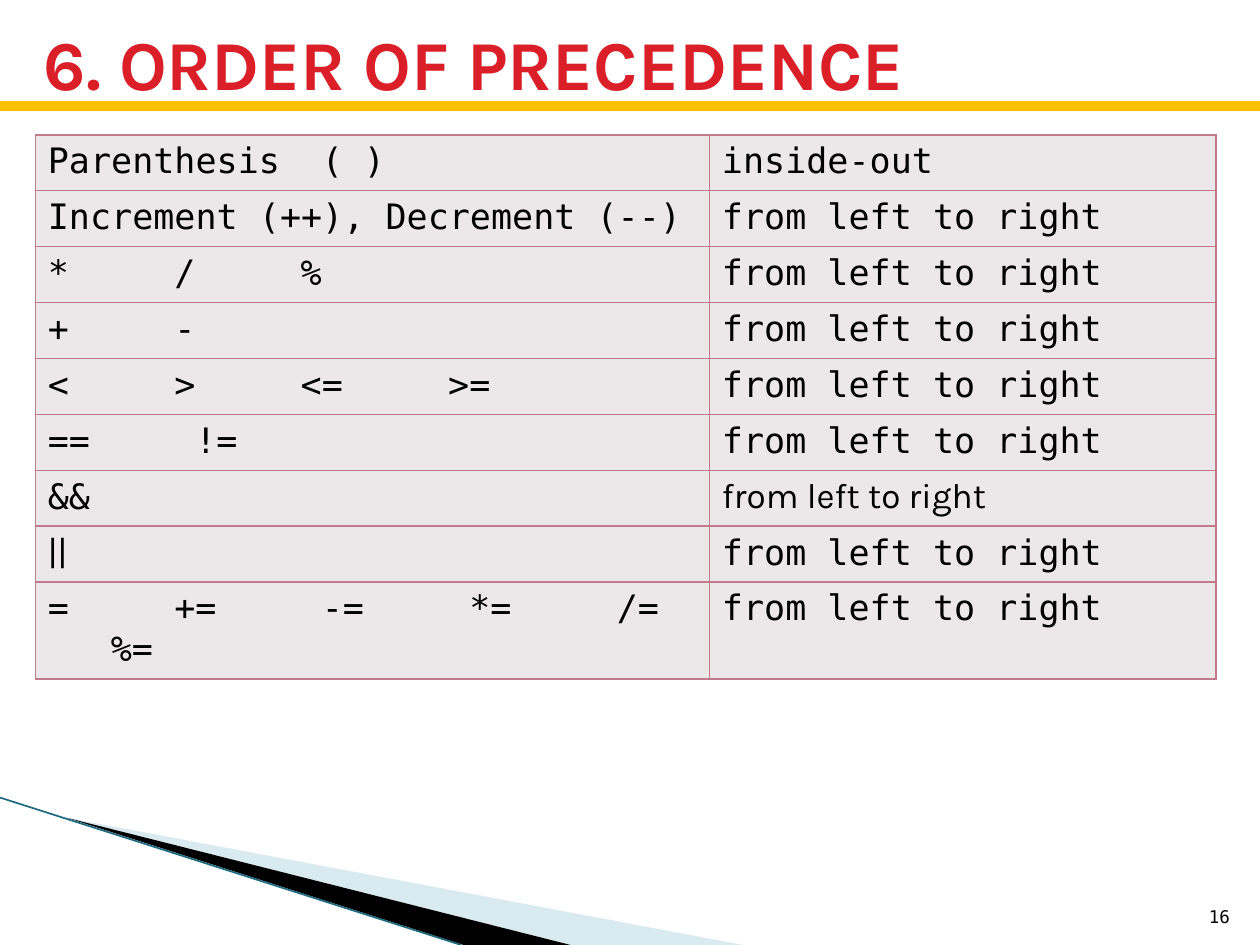
from dataclasses import dataclass

from lxml.etree import SubElement
from pptx import Presentation
from pptx.dml.color import RGBColor
from pptx.enum.shapes import MSO_CONNECTOR
from pptx.enum.text import MSO_ANCHOR, PP_ALIGN
from pptx.oxml.ns import qn
from pptx.util import Inches, Pt


@dataclass(frozen=True)
class Theme:
    heading_font: str = "Karla"
    code_font: str = "DejaVu Sans Mono"
    title_size: int = 40
    table_size: int = 20
    number_size: int = 10
    red: str = "DA1F28"
    yellow: str = "FFC000"
    black: str = "000000"
    pale_blue: str = "A0CBDC"
    teal: str = "1B6A80"
    cell_fill: str = "ECE8E9"
    border: str = "C07B8A"


THEME = Theme()
LEFT_TO_RIGHT = "from left to right"
OPERATOR_GAP = 5
CHARACTER_WIDTH = 0.602 * THEME.table_size / 72

# Operators, order of evaluation, font of each column
PRECEDENCE = [
    ("Parenthesis\t( )", "inside-out", THEME.code_font, THEME.code_font),
    ("Increment (++), Decrement (--)", LEFT_TO_RIGHT, THEME.code_font, THEME.code_font),
    ("*\t/\t%", LEFT_TO_RIGHT, THEME.code_font, THEME.code_font),
    ("+\t-", LEFT_TO_RIGHT, THEME.code_font, THEME.code_font),
    ("<\t>\t<=\t>=", LEFT_TO_RIGHT, THEME.code_font, THEME.code_font),
    ("==\t!=", LEFT_TO_RIGHT, THEME.code_font, THEME.code_font),
    ("&&", LEFT_TO_RIGHT, THEME.code_font, THEME.heading_font),
    ("||", LEFT_TO_RIGHT, THEME.heading_font, THEME.code_font),
    ("=\t+=\t-=\t*=\t/=\n%=", LEFT_TO_RIGHT, THEME.code_font, THEME.code_font),
]


def style_font(font, name, size, color, bold=False):
    font.name = name
    font.size = Pt(size)
    font.bold = bold
    font.color.rgb = RGBColor.from_string(color)


def add_line(page, start, end, color, width):
    line = page.shapes.add_connector(
        MSO_CONNECTOR.STRAIGHT, *map(Inches, start), *map(Inches, end))
    line.line.color.rgb = RGBColor.from_string(color)
    line.line.width = Pt(width)
    SubElement(line._element.spPr, qn("a:effectLst"))


def add_triangle(page, points, color, opacity=100):
    builder = page.shapes.build_freeform(
        Inches(points[0][0]), Inches(points[0][1]))
    builder.add_line_segments([(Inches(x), Inches(y)) for x, y in points[1:]])
    triangle = builder.convert_to_shape()
    triangle.shadow.inherit = False
    triangle.line.fill.background()
    triangle.fill.solid()
    triangle.fill.fore_color.rgb = RGBColor.from_string(color)
    if opacity < 100:
        color_element = triangle._element.spPr.find(
            f"{qn('a:solidFill')}/{qn('a:srgbClr')}")
        SubElement(color_element, qn("a:alpha"), val=str(opacity * 1000))


def add_corner_wedge(page, left, top, width, height):
    """Two slivers and a thin line falling from the left edge to the bottom."""
    bottom = top + height
    tip = (left + 0.53, top + 0.16)
    add_triangle(page, [tip, (left + width, bottom), (left + 4.53, bottom)],
                 THEME.pale_blue, 40)
    add_triangle(page, [tip, (left + 4.53, bottom), (left + 3.68, bottom)],
                 THEME.black)
    add_line(page, (left, top), (left + 3.66, bottom), THEME.teal, 0.95)


def add_label(page, bounds, text, anchor, align, **font_style):
    box = page.shapes.add_textbox(*map(Inches, bounds))
    frame = box.text_frame
    frame.word_wrap = True
    frame.vertical_anchor = anchor
    frame.text = text
    para = frame.paragraphs[0]
    para.alignment = align
    style_font(para.runs[0].font, **font_style)


def add_tab_stops(para, gap):
    """Put each tabbed part the given number of characters after the last."""
    properties = para._p.get_or_add_pPr()
    tab_list = SubElement(properties, qn("a:tabLst"))
    position = 0
    for part in para.text.split("\t")[:-1]:
        position += (len(part) + gap) * CHARACTER_WIDTH
        SubElement(tab_list, qn("a:tab"), pos=str(Inches(position)), algn="l")


def add_borders(cell):
    properties = cell._tc.get_or_add_tcPr()
    for index, side in enumerate(("a:lnL", "a:lnR", "a:lnT", "a:lnB")):
        edge = properties.makeelement(qn(side), {"w": str(Pt(1))})
        fill = SubElement(edge, qn("a:solidFill"))
        SubElement(fill, qn("a:srgbClr"), val=THEME.border)
        properties.insert(index, edge)


def fill_cell(cell, text, font_name):
    cell.fill.solid()
    cell.fill.fore_color.rgb = RGBColor.from_string(THEME.cell_fill)
    add_borders(cell)
    cell.text_frame.text = text
    for index, para in enumerate(cell.text_frame.paragraphs):
        if index:
            para._p.get_or_add_pPr().set("marL", str(Inches(0.5)))
        if "\t" in para.text:
            add_tab_stops(para, 2 if "(" in para.text else OPERATOR_GAP)
        for span in para.runs:
            style_font(span.font, font_name, THEME.table_size, THEME.black)


def add_precedence_table(page, left, top, width, height):
    table = page.shapes.add_table(
        len(PRECEDENCE), 2, *map(Inches, (left, top, width, height))).table
    table.first_row = False
    table.horz_banding = False
    operator_width = 5.35
    table.columns[0].width = Inches(operator_width)
    table.columns[1].width = Inches(width - operator_width)
    row_height = 0.444
    for row in table.rows:
        row.height = Inches(row_height)
    table.rows[len(PRECEDENCE) - 1].height = Inches(
        height - row_height * (len(PRECEDENCE) - 1))
    for index, (operators, order, operator_font, order_font) in enumerate(PRECEDENCE):
        fill_cell(table.cell(index, 0), operators, operator_font)
        fill_cell(table.cell(index, 1), order, order_font)


def add_header(page, left, top, width, height):
    add_label(page, (left, top, width, height), "6. ORDER OF PRECEDENCE",
              MSO_ANCHOR.MIDDLE, PP_ALIGN.LEFT, name=THEME.heading_font,
              size=THEME.title_size, color=THEME.red, bold=True)
    rule_top = top + height + 0.02
    add_line(page, (0, rule_top), (10, rule_top), THEME.yellow, 6)


def main():
    deck = Presentation()
    deck.slide_width = Inches(10)
    deck.slide_height = Inches(7.5)
    page = deck.slides.add_slide(deck.slide_layouts[6])
    add_corner_wedge(page, 0, 6.33, 5.9, 1.17)
    add_header(page, 0.25, 0.17, 9.47, 0.65)
    add_label(page, (9.46, 7.01, 0.4, 0.4), "16", MSO_ANCHOR.BOTTOM,
              PP_ALIGN.RIGHT, name=THEME.code_font, size=THEME.number_size,
              color=THEME.black)
    add_precedence_table(page, 0.28, 1.07, 9.37, 4.3)
    deck.save("out.pptx")


if __name__ == "__main__":
    main()
